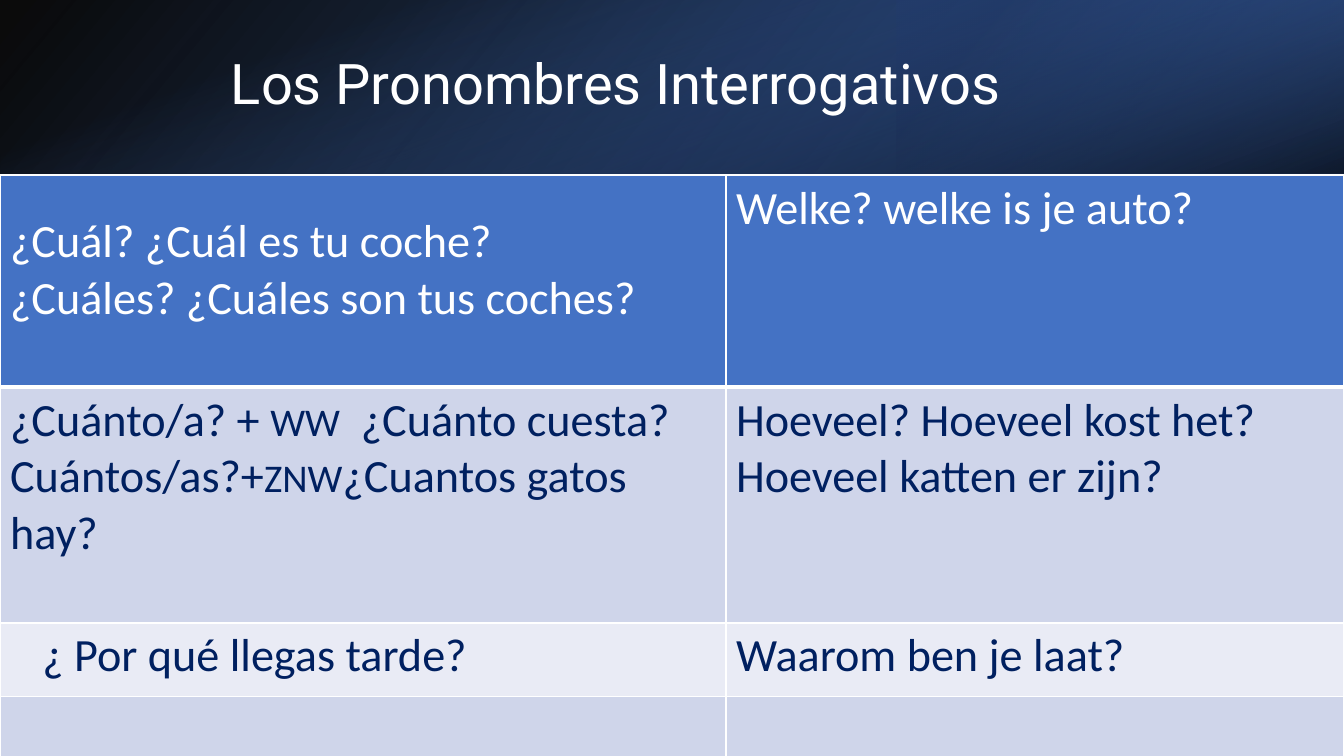
from lxml import etree
from pptx import Presentation
from pptx.dml.color import RGBColor
from pptx.enum import shapes, text
from pptx.oxml.ns import qn
from pptx.util import Inches, Pt

TITLE = "Los Pronombres Interrogativos"
# Each cell is a list of paragraphs, each paragraph a list of runs
ROWS = [
    ([["¿Cuál? ¿Cuál es tu coche?"], ["¿Cuáles? ¿Cuáles son tus coches?"]],
     [["Welke? welke is je auto?"]]),
    ([["¿Cuánto/a? + ", "WW", "  ¿Cuánto cuesta?"],
      ["Cuántos/as?+", "ZNW", "¿Cuantos gatos hay?"]],
     [["Hoeveel? Hoeveel kost het?"], ["Hoeveel katten er zijn?"]]),
    ([["¿ Por qué llegas tarde?"]], [["Waarom ben je laat?"]]),
    ([], []),
]
SMALL_WORDS = {"WW", "ZNW"}
COLORS = {"white": "FFFFFF", "black": "000000", "navy": "002060",
          "header": "4472C4", "band": "CFD5EA", "light": "E9EBF5",
          "blue": "2F5597", "deep": "203864"}
ROW_FILLS = ["header", "band", "light", "band"]
COLUMN_WIDTHS = [7.2, 6.13]
ROW_HEIGHTS = [2.1, 2.34, 0.73, 0.99]
TABLE_TOP = 1.74
WIDTH, HEIGHT, BANNER = 13.33, 7.5, 1.72

# Box, rotation, flipped, gradient angle, stops (position, colour, opacity)
BANNER_LAYERS = [
    ((0, 0, WIDTH, BANNER), 0, True, 140,
     [(0, "black", 96), (100, "blue", 100)]),
    ((8.89, 0, 4.44, BANNER), 180, True, 320,
     [(19, "deep", 68), (100, "header", 79)]),
    (((WIDTH - BANNER) / 2, (BANNER - WIDTH) / 2, BANNER, WIDTH), 90, False, 340,
     [(23, "header", 0), (99, "black", 74)]),
]


def rgb(name):
    return RGBColor.from_string(COLORS[name])


def add_color(parent, name, opacity=100):
    color = etree.SubElement(parent, qn("a:srgbClr"), val=COLORS[name])
    if opacity < 100:
        etree.SubElement(color, qn("a:alpha"), val=str(opacity * 1000))


def add_banner_layer(slide, box, rotation, flipped, angle, stops):
    shape = slide.shapes.add_shape(shapes.MSO_SHAPE.RECTANGLE, *map(Inches, box))
    shape.shadow.inherit = False
    shape.line.fill.background()
    shape.rotation = rotation
    properties = shape._element.spPr
    if flipped:
        properties.find(qn("a:xfrm")).set("flipH", "1")
    shape.fill.gradient()
    gradient = properties.find(qn("a:gradFill"))
    for child in list(gradient):
        gradient.remove(child)
    stop_list = etree.SubElement(gradient, qn("a:gsLst"))
    for position, name, opacity in stops:
        stop = etree.SubElement(stop_list, qn("a:gs"), pos=str(position * 1000))
        add_color(stop, name, opacity)
    etree.SubElement(gradient, qn("a:lin"), ang=str(angle * 60000), scaled="0")


def set_borders(cell, top, bottom):
    properties = cell._tc.get_or_add_tcPr()
    widths = {"a:lnL": 1, "a:lnR": 1, "a:lnT": top, "a:lnB": bottom}
    for index, (tag, width) in enumerate(widths.items()):
        line = etree.Element(qn(tag), w=str(Pt(width)))
        add_color(etree.SubElement(line, qn("a:solidFill")), "white")
        properties.insert(index, line)


def fill_cell(cell, paragraphs, color):
    frame = cell.text_frame
    for index, words in enumerate(paragraphs):
        paragraph = frame.add_paragraph() if index else frame.paragraphs[0]
        for word in words:
            run = paragraph.add_run()
            run.text = word
            run.font.name = "Calibri"
            run.font.size = Pt(28 if word in SMALL_WORDS else 33)
            run.font.bold = False
            run.font.color.rgb = rgb(color)


def add_question_table(slide):
    table = slide.shapes.add_table(
        len(ROWS), len(COLUMN_WIDTHS), 0, Inches(TABLE_TOP),
        Inches(sum(COLUMN_WIDTHS)), Inches(sum(ROW_HEIGHTS))).table
    for column, width in zip(table.columns, COLUMN_WIDTHS):
        column.width = Inches(width)
    for row_index, row in enumerate(ROWS):
        table.rows[row_index].height = Inches(ROW_HEIGHTS[row_index])
        for column_index, paragraphs in enumerate(row):
            cell = table.cell(row_index, column_index)
            cell.fill.solid()
            cell.fill.fore_color.rgb = rgb(ROW_FILLS[row_index])
            set_borders(cell, top=3 if row_index == 1 else 1,
                        bottom=3 if row_index == 0 else 1)
            fill_cell(cell, paragraphs, "navy" if row_index else "white")
    # Spanish cells that start lower or further in
    table.cell(0, 0).margin_top = Inches(0.38)
    table.cell(2, 0).margin_left = Inches(0.42)


def add_title(slide):
    title = slide.shapes.title
    title.left, title.top = Inches(1.5), Inches(0.38)
    title.width, title.height = Inches(10.98), Inches(0.96)
    frame = title.text_frame
    frame.text = TITLE
    frame.margin_left = Inches(0.79)
    frame.vertical_anchor = text.MSO_ANCHOR.MIDDLE
    paragraph = frame.paragraphs[0]
    paragraph.alignment = text.PP_ALIGN.LEFT
    paragraph.line_spacing = 0.9
    font = paragraph.runs[0].font
    font.name, font.size = "Roboto", Pt(40)
    font.color.rgb = rgb("white")
    # Bring the title in front of the banner
    slide.shapes._spTree.append(title._element)


def main():
    presentation = Presentation()
    presentation.slide_width = Inches(WIDTH)
    presentation.slide_height = Inches(HEIGHT)
    slide = presentation.slides.add_slide(presentation.slide_layouts[5])
    slide.background.fill.solid()
    slide.background.fill.fore_color.rgb = rgb("white")
    for layer in BANNER_LAYERS:
        add_banner_layer(slide, *layer)
    add_title(slide)
    add_question_table(slide)
    presentation.save("out.pptx")


if __name__ == "__main__":
    main()
